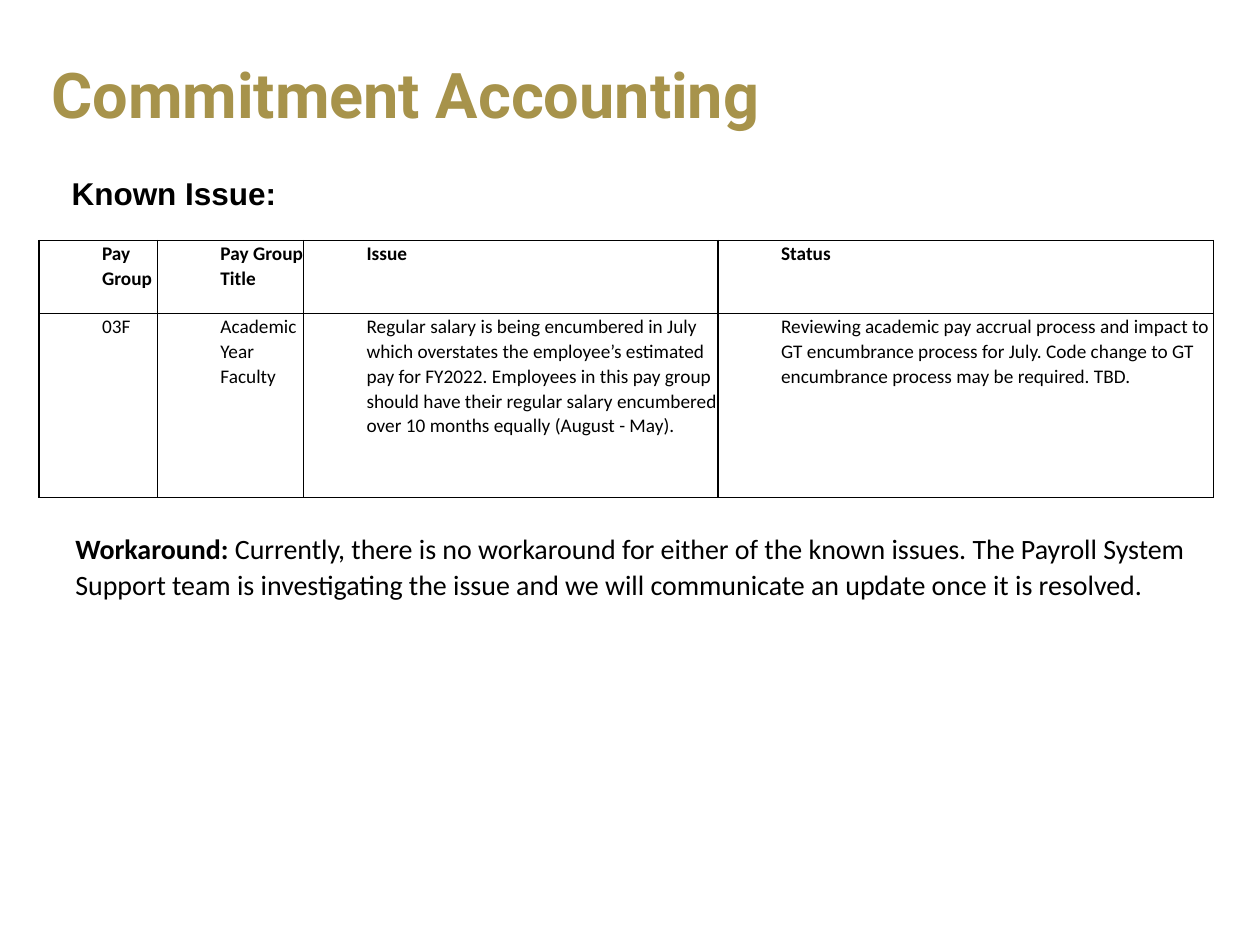
from lxml.etree import SubElement
from pptx import Presentation
from pptx.dml.color import RGBColor
from pptx.enum.text import MSO_ANCHOR
from pptx.oxml.ns import qn
from pptx.util import Inches, Pt

COLORS = {"gold": "A7934B", "black": "000000"}
COLUMN_WIDTHS = [0.94, 1.16, 3.29, 3.93]
ROW_HEIGHTS = [0.58, 1.46]
ISSUE_ROWS = [
    ["Pay Group", "Pay Group Title", "Issue", "Status"],
    [
        "03F",
        "Academic Year Faculty",
        "Regular salary is being encumbered in July which overstates the employee’s "
        "estimated pay for FY2022. Employees in this pay group should have their "
        "regular salary encumbered over 10 months equally (August - May).",
        "Reviewing academic pay accrual process and impact to GT encumbrance process "
        "for July. Code change to GT encumbrance process may be required. TBD.",
    ],
]


def set_font(font, name, size, color="black", bold=None):
    font.name = name
    font.size = Pt(size)
    font.color.rgb = RGBColor.from_string(COLORS[color])
    font.bold = bold


def format_body(paragraph):
    """Indent the whole paragraph and set its line and paragraph spacing."""
    paragraph._p.get_or_add_pPr().set("marL", str(Inches(0.5)))
    paragraph.line_spacing = 1.05
    paragraph.space_after = Pt(8)


def add_text_box(slide, left, top, width, height, anchor=MSO_ANCHOR.TOP):
    """Add a wrapping text box and return its first paragraph."""
    box = slide.shapes.add_textbox(Inches(left), Inches(top), Inches(width), Inches(height))
    box.text_frame.word_wrap = True
    box.text_frame.vertical_anchor = anchor
    return box.text_frame.paragraphs[0]


def add_heading(slide, text, box, name, size, color, anchor=MSO_ANCHOR.TOP):
    paragraph = add_text_box(slide, *box, anchor)
    paragraph.text = text
    set_font(paragraph.font, name, size, color, bold=True)
    return paragraph


def add_borders(cell):
    properties = cell._tc.get_or_add_tcPr()
    for index, side in enumerate(("a:lnL", "a:lnR", "a:lnT", "a:lnB")):
        line = properties.makeelement(qn(side), {"w": str(Pt(1))})
        fill = SubElement(line, qn("a:solidFill"))
        SubElement(fill, qn("a:srgbClr"), val=COLORS["black"])
        properties.insert(index, line)


def add_issue_table(slide, left, top):
    frame = slide.shapes.add_table(
        len(ISSUE_ROWS), len(COLUMN_WIDTHS), Inches(left), Inches(top),
        Inches(sum(COLUMN_WIDTHS)), Inches(sum(ROW_HEIGHTS)))
    table = frame.table
    for column, width in zip(table.columns, COLUMN_WIDTHS):
        column.width = Inches(width)
    for row, height, texts in zip(table.rows, ROW_HEIGHTS, ISSUE_ROWS):
        row.height = Inches(height)
        for cell, text in zip(row.cells, texts):
            cell.margin_left = cell.margin_right = 0
            cell.margin_top = cell.margin_bottom = 0
            cell.fill.background()
            add_borders(cell)
            cell.text = text
            paragraph = cell.text_frame.paragraphs[0]
            format_body(paragraph)
            set_font(paragraph.font, "Calibri", 11, bold=texts is ISSUE_ROWS[0])


def add_workaround(slide, left, top, width, height):
    paragraph = add_text_box(slide, left, top, width, height)
    format_body(paragraph)
    set_font(paragraph.font, "Calibri", 16)
    label = paragraph.add_run()
    label.text = "Workaround: "
    label.font.bold = True
    paragraph.add_run().text = (
        "Currently, there is no workaround for either of the known issues. The Payroll System "
        "Support team is investigating the issue and we will communicate an update "
        "once it is resolved.")


def main():
    presentation = Presentation()
    presentation.slide_width = Inches(10)
    presentation.slide_height = Inches(7.5)
    slide = presentation.slides.add_slide(presentation.slide_layouts[6])
    title = add_heading(slide, "Commitment Accounting", (0.31, 0.22, 9.38, 1.11),
                        "Roboto", 36, "gold", MSO_ANCHOR.MIDDLE)
    title.line_spacing = 0.9
    add_heading(slide, "Known Issue:", (0.47, 1.33, 9.22, 0.4), "Arial", 18, "black")
    add_issue_table(slide, 0.31, 1.91)
    add_workaround(slide, 0, 4.16, 10, 0.69)
    presentation.save("out.pptx")


if __name__ == "__main__":
    main()
